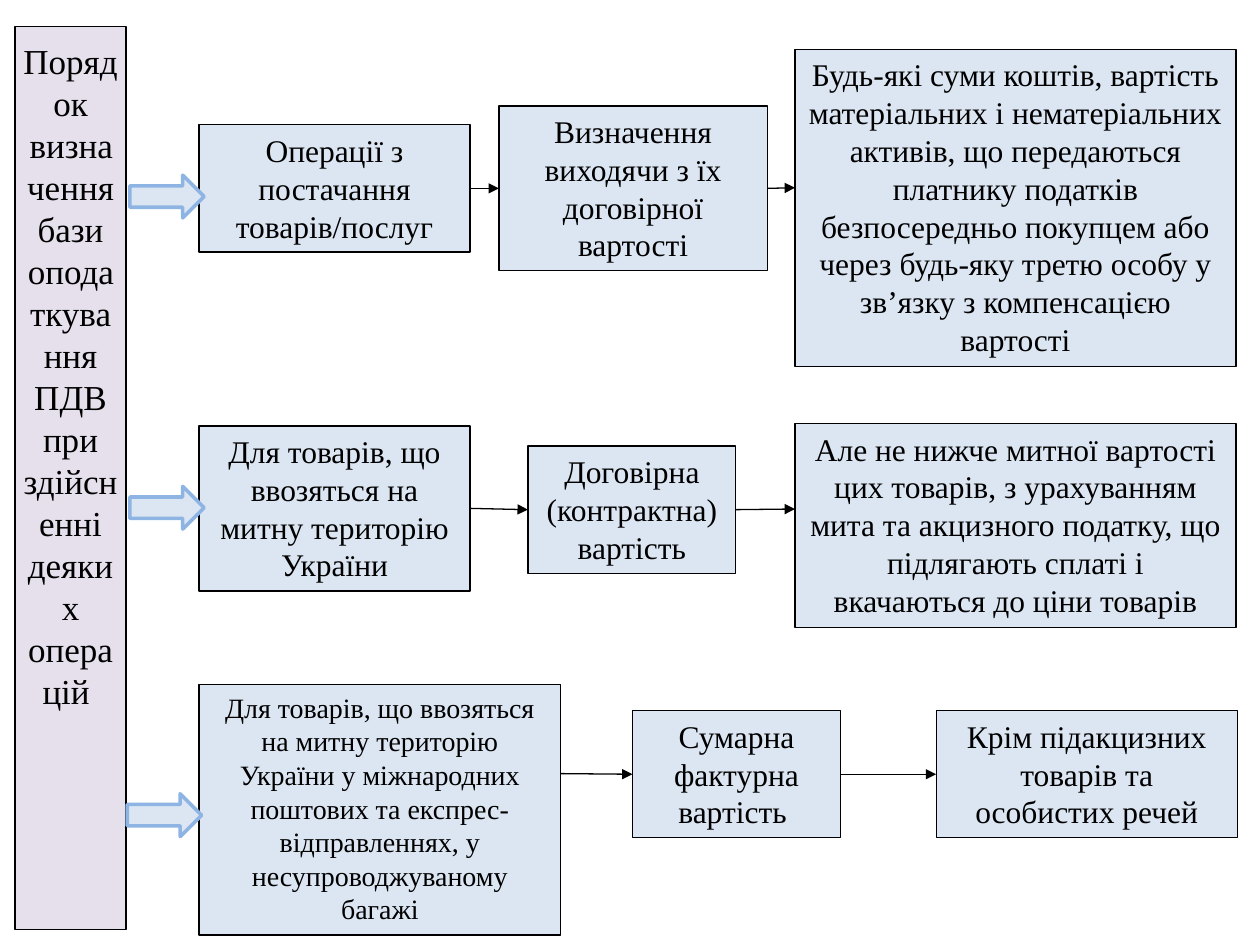
from typing import NamedTuple

from pptx import Presentation
from pptx.dml.color import RGBColor
from pptx.enum.shapes import MSO_CONNECTOR, MSO_SHAPE
from pptx.enum.text import MSO_ANCHOR, MSO_AUTO_SIZE, PP_ALIGN
from pptx.oxml.ns import qn
from pptx.util import Inches, Pt
from lxml.etree import SubElement

BLACK = RGBColor(0x00, 0x00, 0x00)
LILAC = RGBColor(0xE6, 0xE0, 0xEC)
PALE_BLUE = RGBColor(0xDC, 0xE6, 0xF2)
ARROW_BLUE = RGBColor(0x8E, 0xB4, 0xE3)
FONT = "Times New Roman"
LEFT_SIDE, RIGHT_SIDE = 1, 3
JOIN_TOLERANCE = 0.02


class Box(NamedTuple):
    text: str
    left: float
    top: float
    width: float
    height: float
    size: int = 18

    @property
    def middle(self) -> float:
        return self.top + self.height / 2


class Row(NamedTuple):
    axis: float
    arrow_left: float
    arrow_top: float
    boxes: tuple[Box, ...]


TITLE = Box("Порядок визначення бази оподаткування ПДВ при здійсненні деяких операцій ",
            0.12, 0.21, 0.88, 7.17, 20)
ROWS = (
    Row(1.49, 1.03, 1.39, (
        Box("Операції з постачання товарів/послуг", 1.58, 0.99, 2.15, 1.01),
        Box("Визначення виходячи з їх договірної вартості", 3.96, 0.84, 2.13, 1.31),
        Box("Будь-які суми коштів, вартість матеріальних і нематеріальних активів, "
            "що передаються платнику податків безпосередньо покупцем або через "
            "будь-яку третю особу у зв’язку з компенсацією вартості",
            6.31, 0.39, 3.5, 2.52),
    )),
    Row(4.04, 1.03, 3.86, (
        Box("Для товарів, що ввозяться на митну територію України", 1.58, 3.38, 2.15, 1.31),
        Box("Договірна (контрактна) вартість", 4.19, 3.54, 1.65, 1.01),
        Box("Але не нижче митної вартості цих товарів, з урахуванням мита та "
            "акцизного податку, що підлягають сплаті і вкачаються до ціни товарів",
            6.31, 3.36, 3.5, 1.62),
    )),
    Row(6.14, 1.01, 6.3, (
        Box("Для товарів, що ввозяться на митну територію України у міжнародних "
            "поштових та експрес-відправленнях, у несупроводжуваному багажі",
            1.58, 5.43, 2.87, 1.99, 16),
        Box("Сумарна фактурна вартість ", 5.02, 5.64, 1.65, 1.01),
        Box("Крім підакцизних товарів та особистих речей", 7.43, 5.64, 2.39, 1.01),
    )),
)


def paint(shape, fill: RGBColor, line: RGBColor = BLACK, line_width: float = 0.75) -> None:
    shape.fill.solid()
    shape.fill.fore_color.rgb = fill
    shape.line.color.rgb = line
    shape.line.width = Pt(line_width)


def write_text(shape, text: str, *, size: int, color: RGBColor = BLACK,
               alignment=PP_ALIGN.CENTER) -> None:
    frame = shape.text_frame
    frame.word_wrap = True
    frame.auto_size = MSO_AUTO_SIZE.SHAPE_TO_FIT_TEXT
    frame.vertical_anchor = MSO_ANCHOR.TOP
    paragraph = frame.paragraphs[0]
    paragraph.alignment = alignment
    run = paragraph.add_run()
    run.text = text
    run.font.name = FONT
    run.font.size = Pt(size)
    run.font.color.rgb = color


def place_title(slide, box: Box) -> None:
    title = slide.shapes.title
    title.left, title.top = Inches(box.left), Inches(box.top)
    title.width, title.height = Inches(box.width), Inches(box.height)
    paint(title, LILAC)
    write_text(title, box.text, size=box.size)
    title.text_frame._txBody.bodyPr.set("vert", "vert270")


def add_box(slide, box: Box):
    shape = slide.shapes.add_shape(
        MSO_SHAPE.RECTANGLE, Inches(box.left), Inches(box.top),
        Inches(box.width), Inches(box.height))
    shape.shadow.inherit = False
    paint(shape, PALE_BLUE)
    write_text(shape, box.text, size=box.size)
    return shape


def add_block_arrow(slide, row: Row) -> None:
    arrow = slide.shapes.add_shape(
        MSO_SHAPE.RIGHT_ARROW, Inches(row.arrow_left), Inches(row.arrow_top),
        Inches(0.59), Inches(0.34))
    arrow.shadow.inherit = False
    paint(arrow, PALE_BLUE, ARROW_BLUE, 2)


def add_link(slide, axis: float, source: Box, target: Box, source_shape, target_shape) -> None:
    """Draw an arrow along the axis, joined to boxes that are centred on it."""
    connector = slide.shapes.add_connector(
        MSO_CONNECTOR.STRAIGHT, Inches(source.left + source.width), Inches(axis),
        Inches(target.left), Inches(axis))
    if abs(source.middle - axis) < JOIN_TOLERANCE:
        connector.begin_connect(source_shape, RIGHT_SIDE)
    if abs(target.middle - axis) < JOIN_TOLERANCE:
        connector.end_connect(target_shape, LEFT_SIDE)
    connector.line.color.rgb = BLACK
    connector.line.width = Pt(0.75)
    properties = connector._element.spPr
    SubElement(properties.find(qn("a:ln")), qn("a:tailEnd"), type="triangle")
    SubElement(properties, qn("a:effectLst"))


def main() -> None:
    presentation = Presentation()
    presentation.slide_width, presentation.slide_height = Inches(10), Inches(7.5)
    slide = presentation.slides.add_slide(presentation.slide_layouts[5])
    place_title(slide, TITLE)
    for row in ROWS:
        shapes = [add_box(slide, box) for box in row.boxes]
        add_block_arrow(slide, row)
        for index in range(len(shapes) - 1):
            add_link(slide, row.axis, *row.boxes[index:index + 2], *shapes[index:index + 2])
    presentation.save("out.pptx")


if __name__ == "__main__":
    main()
